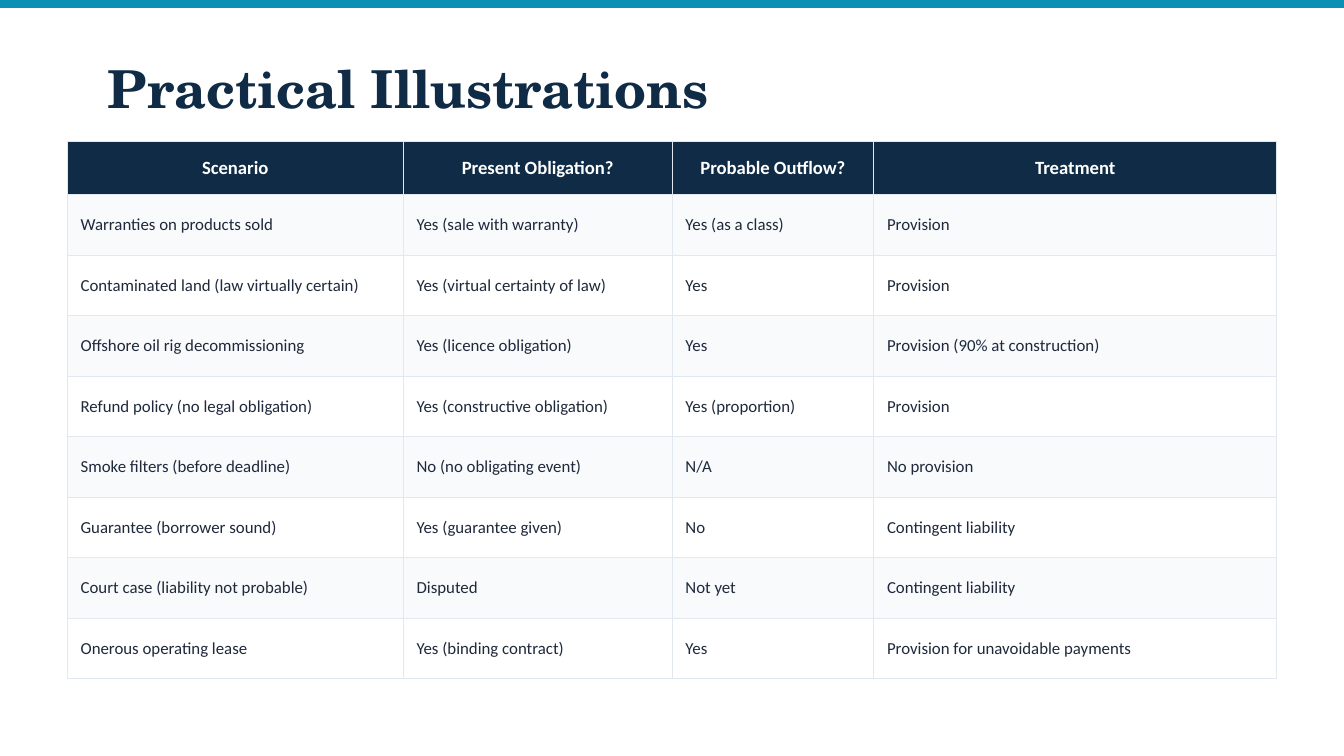
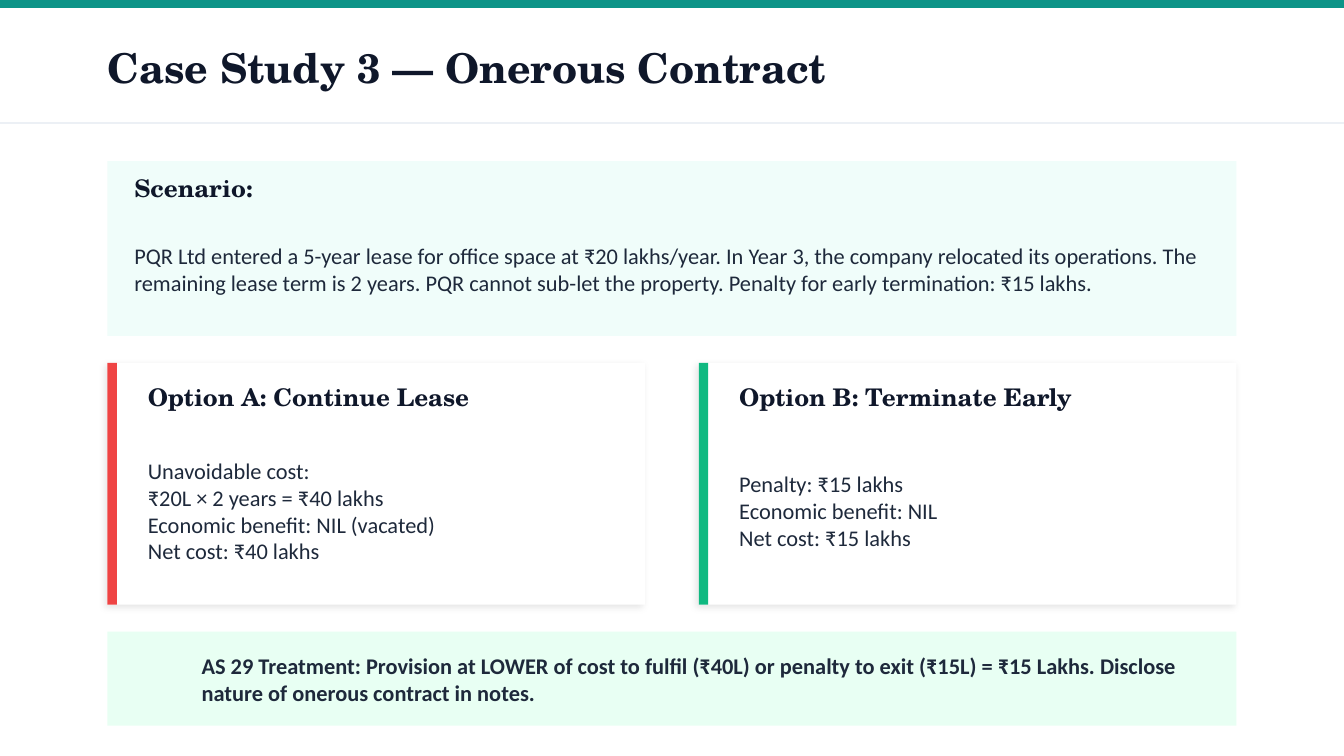
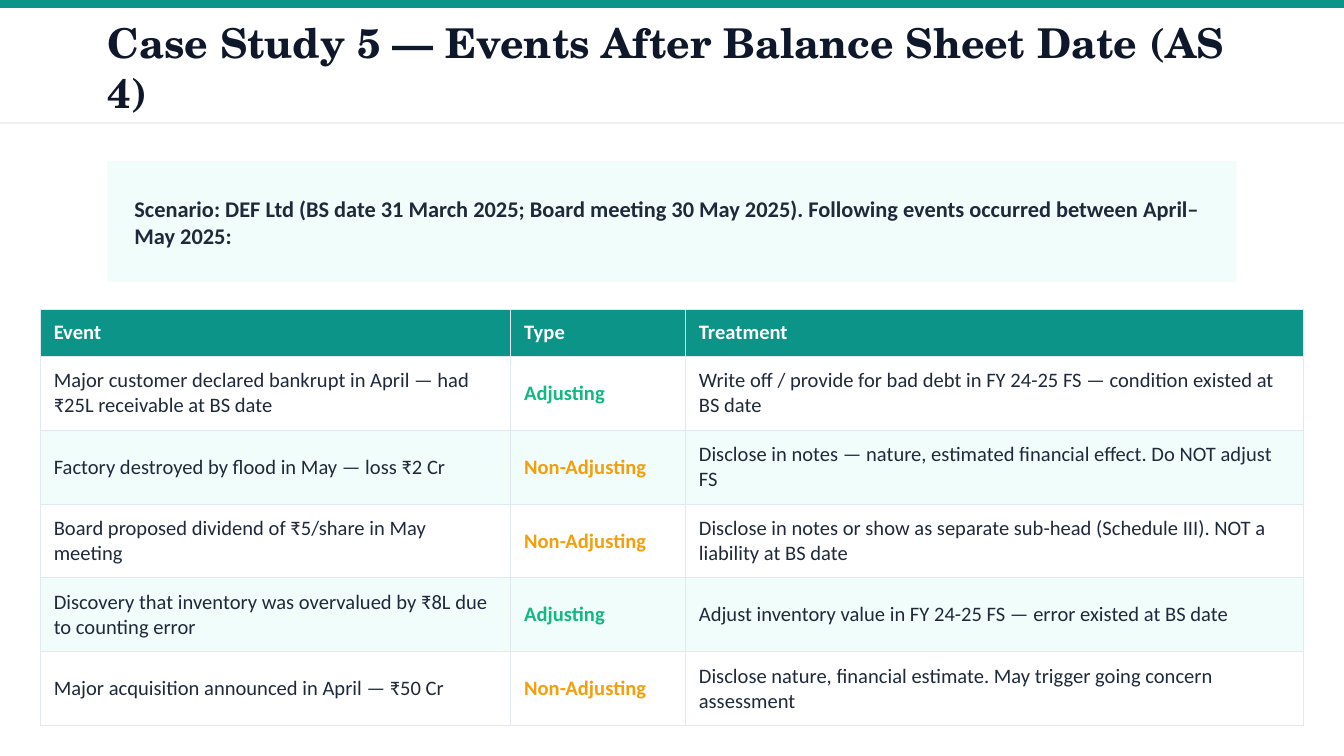
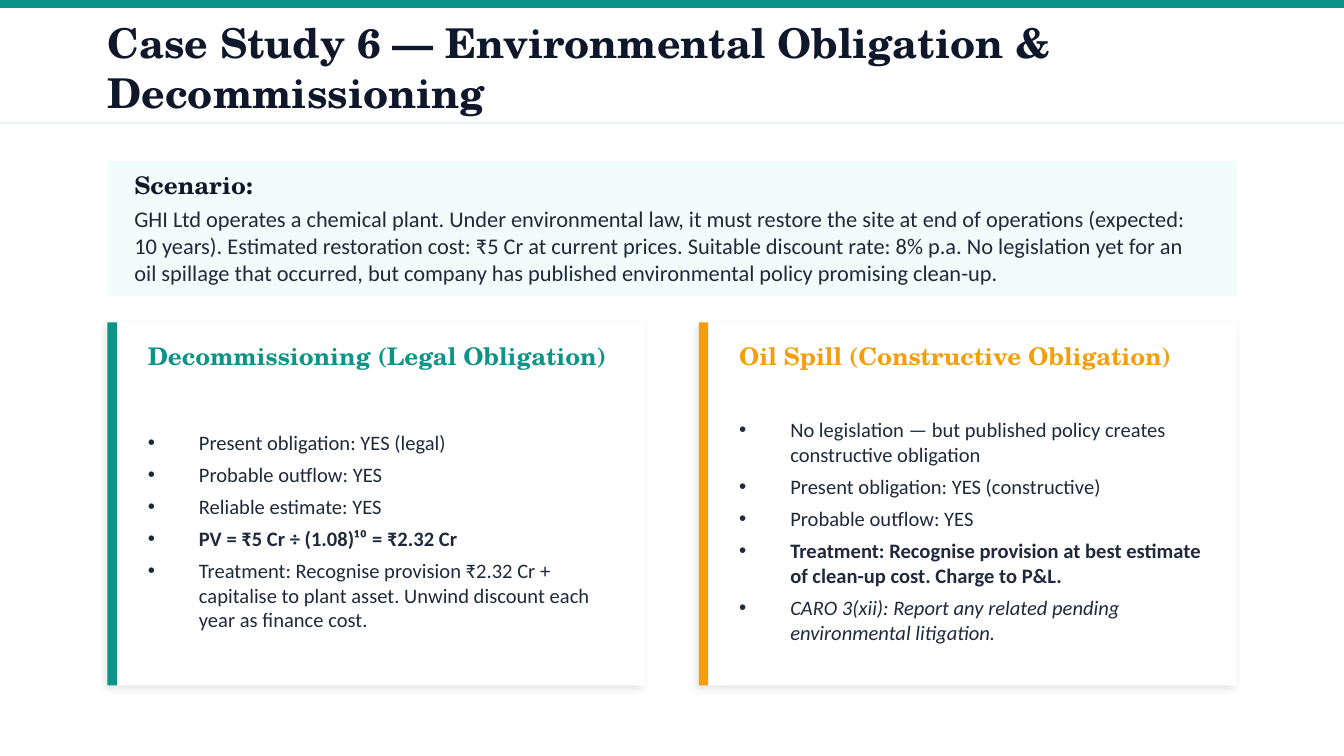
from lxml.etree import SubElement
from pptx import Presentation
from pptx.dml.color import RGBColor
from pptx.enum.shapes import MSO_SHAPE
from pptx.enum.text import MSO_ANCHOR, MSO_AUTO_SIZE, PP_ALIGN
from pptx.oxml.ns import qn
from pptx.util import Inches, Pt

# Shared style
NAVY, CYAN, TEAL, INK = "0F2B46", "0891B2", "0D9488", "0F172A"
SLATE, RULE, WHITE, MIST = "1E293B", "E2E8F0", "FFFFFF", "F8FAFC"
MINT, PALE_GREEN = "F0FDFA", "E8FFF3"
RED, GREEN, AMBER = "EF4444", "10B981", "F59E0B"
SERIF, SANS = "TeX Gyre Schola", "Calibri"

TITLE = dict(name=SERIF, size=22, bold=True, color=INK)
HEADING = dict(TITLE, size=13)
BODY = dict(name=SANS, size=12, bold=False, color=SLATE)
STRONG = dict(BODY, bold=True)
BULLET = dict(BODY, size=11)

# Grid: 100 columns across, with rows of the same size
COLUMNS = 100
MARGIN, CONTENT = 8, 84
INSET, INSET_WIDTH = 10, 80
TITLE_ONLY, TWO_CONTENT = 5, 3


def rgb(value):
    return RGBColor.from_string(value)


class SlideBuilder:
    """Holds the deck, its grid and the current slide."""

    def __init__(self):
        self.deck = Presentation()
        self.deck.slide_width = Inches(10)
        self.deck.slide_height = Inches(5.625)
        self.cell = self.deck.slide_width // COLUMNS
        self.page = None

    def grid(self, *lengths):
        return [round(length * self.cell) for length in lengths]

    # Text
    def format_run(self, run, style):
        for key, value in style.items():
            if key == "color":
                run.font.color.rgb = rgb(value)
            else:
                setattr(run.font, key, Pt(value) if key == "size" else value)

    def fill_text(self, frame, lines, style, align=PP_ALIGN.LEFT):
        """Each line is a string, or a string with changes to the style."""
        for index, line in enumerate(lines):
            text, changes = (line, {}) if isinstance(line, str) else line
            para = frame.paragraphs[0] if index == 0 else frame.add_paragraph()
            para.alignment = align
            span = para.add_run()
            span.text = text
            self.format_run(span, {**style, **changes})

    def set_frame(self, frame):
        settings = dict(word_wrap=True, auto_size=MSO_AUTO_SIZE.NONE,
                        vertical_anchor=MSO_ANCHOR.MIDDLE, margin_left=0,
                        margin_right=0, margin_top=0, margin_bottom=0)
        for key, value in settings.items():
            setattr(frame, key, value)

    def text(self, area, lines, style):
        box = self.page.shapes.add_textbox(*self.grid(*area))
        self.set_frame(box.text_frame)
        self.fill_text(box.text_frame, lines, style)

    def placeholder(self, holder, area, lines, style):
        for key, value in zip(("left", "top", "width", "height"), self.grid(*area)):
            setattr(holder, key, value)
        self.set_frame(holder.text_frame)
        self.fill_text(holder.text_frame, lines, style)
        holder.element.getparent().append(holder.element)  # bring to front

    def body(self, index, area, lines, style, bulleted):
        holder = self.page.placeholders[index]
        self.placeholder(holder, area, lines, style)
        indent = Inches(0.38) if bulleted else 0
        for para in holder.text_frame.paragraphs:
            para.space_before = Pt(0)
            para.space_after = Pt(4 if bulleted else 0)
            properties = para._p.get_or_add_pPr()
            properties.set("marL", str(indent))
            properties.set("indent", str(-indent))
            if bulleted:
                SubElement(properties, qn("a:buChar"), char="•")
            else:
                SubElement(properties, qn("a:buNone"))

    # Shapes
    def panel(self, area, color, shadow=False):
        box = self.page.shapes.add_shape(MSO_SHAPE.RECTANGLE, *self.grid(*area))
        box.shadow.inherit = False
        box.fill.solid()
        box.fill.fore_color.rgb = rgb(color)
        box.line.fill.background()
        if shadow:
            effects = box.element.spPr.find(qn("a:effectLst"))
            outer = SubElement(effects, qn("a:outerShdw"), blurRad=str(Pt(4)),
                               dist=str(Pt(2)), dir=str(135 * 60000),
                               algn="bl", rotWithShape="0")
            black = SubElement(outer, qn("a:srgbClr"), val="000000")
            SubElement(black, qn("a:alpha"), val="10000")

    def card(self, index, top, height, accent, heading, color, lines,
             style=BODY, bulleted=False):
        left = MARGIN + 44 * (index - 1)
        self.panel((left, top, 40, height), WHITE, shadow=True)
        self.panel((left, top, 0.7, height), accent)
        self.text((left + 3, top + 0.5, 35, 4), [heading], dict(HEADING, color=color))
        self.body(index, (left + 3, top + 5, 35, height - 6), lines, style, bulleted)

    # Slides
    def start(self, layout, accent):
        self.page = self.deck.slides.add_slide(self.deck.slide_layouts[layout])
        self.panel((0, 0, COLUMNS, 0.6), accent)

    def case_study(self, layout, title):
        self.start(layout, TEAL)
        self.panel((0, 0.6, COLUMNS, 8.5), WHITE)
        self.panel((0, 9.1, COLUMNS, 0.1), RULE)
        self.placeholder(self.page.shapes.title, (MARGIN, 1.5, CONTENT, 7), [title], TITLE)

    def scenario(self, height, heading_height, text_top, text_height, text):
        self.panel((MARGIN, 12, CONTENT, height), MINT)
        self.text((INSET, 12, 15, heading_height), ["Scenario:"], HEADING)
        self.text((INSET, text_top, INSET_WIDTH, text_height), [text], BODY)

    # Tables
    def border(self, cell):
        properties = cell._tc.get_or_add_tcPr()
        for side in ("lnL", "lnR", "lnT", "lnB"):
            line = SubElement(properties, qn(f"a:{side}"), w=str(Pt(0.5)))
            fill = SubElement(line, qn("a:solidFill"))
            SubElement(fill, qn("a:srgbClr"), val=RULE)

    def table(self, left, top, widths, heights, rows, header_fill, bands,
              header, style, header_align=PP_ALIGN.LEFT):
        """Bands are the fills of odd and even rows; None means no fill."""
        area = self.grid(left, top, sum(widths), sum(heights))
        table = self.page.shapes.add_table(len(rows), len(widths), *area).table
        table.first_row = table.horz_banding = False
        for column, width in zip(table.columns, self.grid(*widths)):
            column.width = width
        for number, (row, height) in enumerate(zip(table.rows, self.grid(*heights))):
            row.height = height
            fill = bands[(number - 1) % 2] if number else header_fill
            for cell, line in zip(row.cells, rows[number]):
                cell.vertical_anchor = MSO_ANCHOR.MIDDLE
                self.border(cell)
                if fill:
                    cell.fill.solid()
                    cell.fill.fore_color.rgb = rgb(fill)
                else:
                    cell.fill.background()
                self.fill_text(cell.text_frame, [line], style if number else header,
                               PP_ALIGN.LEFT if number else header_align)


def illustrations(builder):
    builder.start(TITLE_ONLY, CYAN)
    builder.placeholder(builder.page.shapes.title, (MARGIN, 3.5, 90, 6),
                        ["Practical Illustrations"], dict(TITLE, size=28, color=NAVY))
    rows = [
        ("Scenario", "Present Obligation?", "Probable Outflow?", "Treatment"),
        ("Warranties on products sold", "Yes (sale with warranty)",
         "Yes (as a class)", "Provision"),
        ("Contaminated land (law virtually certain)", "Yes (virtual certainty of law)",
         "Yes", "Provision"),
        ("Offshore oil rig decommissioning", "Yes (licence obligation)",
         "Yes", "Provision (90% at construction)"),
        ("Refund policy (no legal obligation)", "Yes (constructive obligation)",
         "Yes (proportion)", "Provision"),
        ("Smoke filters (before deadline)", "No (no obligating event)",
         "N/A", "No provision"),
        ("Guarantee (borrower sound)", "Yes (guarantee given)",
         "No", "Contingent liability"),
        ("Court case (liability not probable)", "Disputed",
         "Not yet", "Contingent liability"),
        ("Onerous operating lease", "Yes (binding contract)",
         "Yes", "Provision for unavoidable payments"),
    ]
    builder.table(5, 10.5, (25, 20, 15, 30), [4] + [4.5] * 8, rows, NAVY, (MIST, WHITE),
                  dict(STRONG, size=10, color=WHITE), dict(BODY, size=9), PP_ALIGN.CENTER)


def onerous_contract(builder):
    builder.case_study(TWO_CONTENT, "Case Study 3 — Onerous Contract")
    builder.scenario(13, 4, 15.5, 9,
                     "PQR Ltd entered a 5-year lease for office space at ₹20 lakhs/year. "
                     "In Year 3, the company relocated its operations. The remaining lease "
                     "term is 2 years. PQR cannot sub-let the property. Penalty for early "
                     "termination: ₹15 lakhs.")
    builder.card(1, 27, 18, RED, "Option A: Continue Lease", INK,
                 ["Unavoidable cost:", "₹20L × 2 years = ₹40 lakhs",
                  "Economic benefit: NIL (vacated)", "Net cost: ₹40 lakhs"])
    builder.card(2, 27, 18, GREEN, "Option B: Terminate Early", INK,
                 ["Penalty: ₹15 lakhs", "Economic benefit: NIL", "Net cost: ₹15 lakhs"])
    builder.panel((MARGIN, 47, CONTENT, 7), PALE_GREEN)
    builder.text((15, 47, 75, 7),
                 ["AS 29 Treatment: Provision at LOWER of cost to fulfil (₹40L) or penalty "
                  "to exit (₹15L) = ₹15 Lakhs. Disclose nature of onerous contract in notes."],
                 STRONG)


def balance_sheet_events(builder):
    builder.case_study(TITLE_ONLY, "Case Study 5 — Events After Balance Sheet Date (AS 4)")
    builder.panel((MARGIN, 12, CONTENT, 9), MINT)
    builder.text((INSET, 12.5, INSET_WIDTH, 8),
                 ["Scenario: DEF Ltd (BS date 31 March 2025; Board meeting 30 May 2025). "
                  "Following events occurred between April–May 2025:"], STRONG)
    adjusting = ("Adjusting", dict(bold=True, color=GREEN))
    non_adjusting = ("Non-Adjusting", dict(bold=True, color=AMBER))
    rows = [
        ("Event", "Type", "Treatment"),
        ("Major customer declared bankrupt in April — had ₹25L receivable at BS date", adjusting,
         "Write off / provide for bad debt in FY 24-25 FS — condition existed at BS date"),
        ("Factory destroyed by flood in May — loss ₹2 Cr", non_adjusting,
         "Disclose in notes — nature, estimated financial effect. Do NOT adjust FS"),
        ("Board proposed dividend of ₹5/share in May meeting", non_adjusting,
         "Disclose in notes or show as separate sub-head (Schedule III). "
         "NOT a liability at BS date"),
        ("Discovery that inventory was overvalued by ₹8L due to counting error", adjusting,
         "Adjust inventory value in FY 24-25 FS — error existed at BS date"),
        ("Major acquisition announced in April — ₹50 Cr", non_adjusting,
         "Disclose nature, financial estimate. May trigger going concern assessment"),
    ]
    builder.table(3, 23, (35, 13, 46), [3.5] + [5.5] * 5, rows, TEAL, (None, MINT),
                  dict(STRONG, size=11, color=WHITE), BULLET)


def environmental_obligation(builder):
    builder.case_study(TWO_CONTENT,
                       "Case Study 6 — Environmental Obligation & Decommissioning")
    builder.scenario(10, 3.5, 15, 6.5,
                     "GHI Ltd operates a chemical plant. Under environmental law, it must "
                     "restore the site at end of operations (expected: 10 years). Estimated "
                     "restoration cost: ₹5 Cr at current prices. Suitable discount rate: 8% "
                     "p.a. No legislation yet for an oil spillage that occurred, but company "
                     "has published environmental policy promising clean-up.")
    builder.card(1, 24, 27, TEAL, "Decommissioning (Legal Obligation)", TEAL,
                 ["Present obligation: YES (legal)", "Probable outflow: YES",
                  "Reliable estimate: YES",
                  ("PV = ₹5 Cr ÷ (1.08)¹⁰ = ₹2.32 Cr", dict(bold=True)),
                  "Treatment: Recognise provision ₹2.32 Cr + capitalise to plant asset. "
                  "Unwind discount each year as finance cost."], BULLET, bulleted=True)
    builder.card(2, 24, 27, AMBER, "Oil Spill (Constructive Obligation)", AMBER,
                 ["No legislation — but published policy creates constructive obligation",
                  "Present obligation: YES (constructive)", "Probable outflow: YES",
                  ("Treatment: Recognise provision at best estimate of clean-up cost. "
                   "Charge to P&L.", dict(bold=True)),
                  ("CARO 3(xii): Report any related pending environmental litigation.",
                   dict(italic=True))], BULLET, bulleted=True)


def main():
    builder = SlideBuilder()
    for build in (illustrations, onerous_contract, balance_sheet_events,
                  environmental_obligation):
        build(builder)
    builder.deck.save("out.pptx")


if __name__ == "__main__":
    main()
